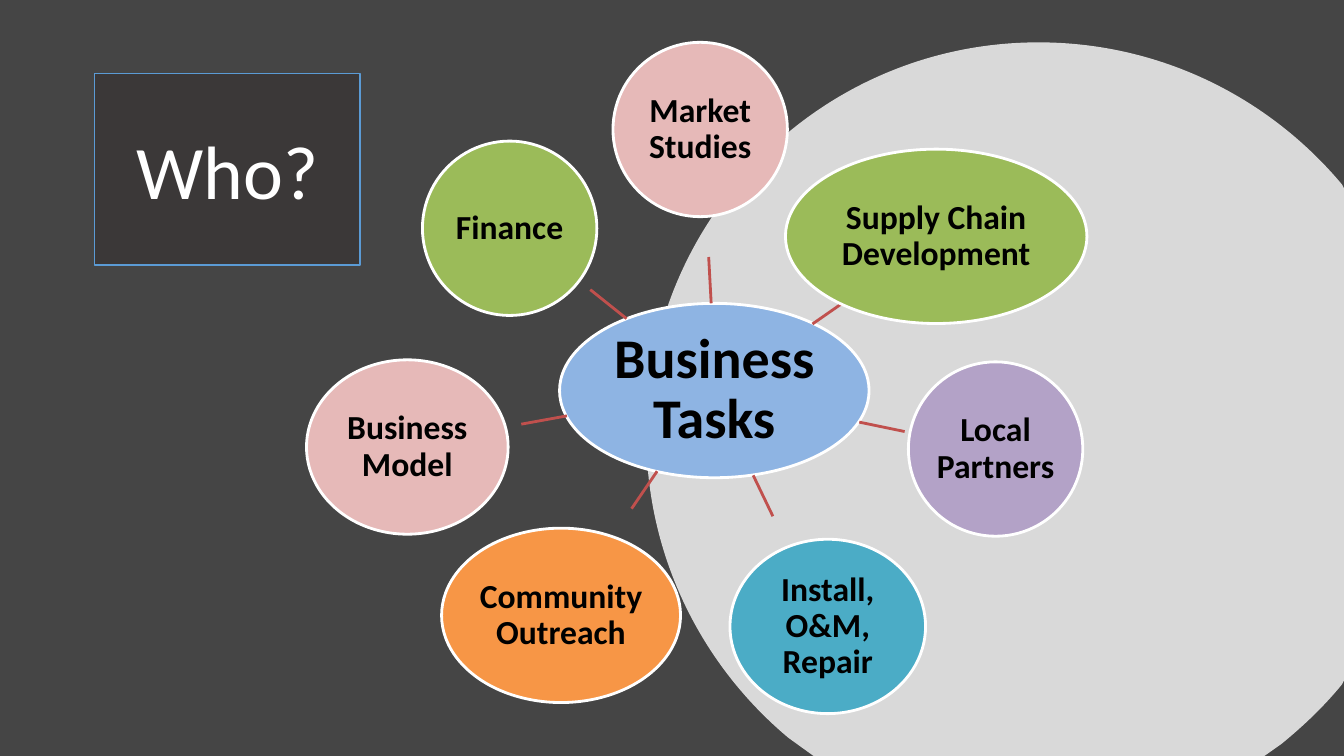
from dataclasses import dataclass

from lxml.etree import SubElement
from pptx import Presentation
from pptx.dml.color import RGBColor
from pptx.enum.shapes import MSO_SHAPE
from pptx.enum.text import MSO_ANCHOR, PP_ALIGN
from pptx.oxml.ns import qn
from pptx.util import Inches, Pt


@dataclass(frozen=True)
class Theme:
    font: str = "Calibri"
    background: str = "454545"
    title_fill: str = "3B3838"
    title_line: str = "5B9BD5"
    white: str = "FFFFFF"
    black: str = "000000"
    hub: str = "8EB4E3"
    spoke: str = "C0504D"
    pink: str = "E6B9B8"
    green: str = "9BBB59"
    purple: str = "B3A2C7"
    teal: str = "4BACC6"
    orange: str = "F79646"
    title_size: int = 54
    hub_size: int = 40
    node_size: int = 24


THEME = Theme()
WIDTH, HEIGHT = 13.33, 7.5
NODE_HEIGHT = 1.73
SPOKE_HEIGHT = 0.03
HUB = (5.55, 3.01, 3.07)
NODES = [
    ("Market Studies", THEME.pink, (6.08, 0.42, 1.73), (6.58, 2.56, 0.87, 266.9, 0.46)),
    ("Supply Chain Development", THEME.green, (7.79, 1.48, 2.99), (8.02, 3.09, 0.34, 325.2, 0.37)),
    ("Local Partners", THEME.purple, (9.01, 3.59, 1.73), (8.52, 4.21, 0.51, 11.7, 0.46)),
    ("Install, O&M, Repair", THEME.teal, (7.24, 5.35, 1.94), (7.26, 5.05, 0.79, 64.3, 0.45)),
    ("Community Outreach", THEME.orange, (4.38, 5.24, 2.37), (5.92, 4.99, 0.78, 124.3, 0.45)),
    ("Business Model", THEME.pink, (3.04, 3.57, 2), (5.02, 4.18, 0.61, 169.7, 0.46)),
    ("Finance", THEME.green, (4.19, 1.4, 1.73), (5.67, 2.97, 0.6, 218.6, 0.46)),
]
DISC_START = (10.3, 0.42)
DISC_SEGMENTS = [
    [(11.51, 0.42), (12.59, 0.97), (13.31, 1.83)],
    [(13.33, 1.87)],
    [(13.33, 6.75)],
    [(13.31, 6.79)],
    [(13.13, 7.01), (12.93, 7.2), (12.71, 7.38)],
    [(12.54, 7.5)],
    [(8.07, 7.5)],
    [(7.82, 7.32)],
    [(6.96, 6.6), (6.41, 5.52), (6.41, 4.31)],
    [(6.41, 2.16), (8.15, 0.42), (10.3, 0.42)],
]


def rgb(color):
    return RGBColor.from_string(color)


def apply(target, values):
    for name, value in values.items():
        setattr(target, name, value)


def stroke(sp, color, width):
    sp.shadow.inherit = False
    sp.line.color.rgb = rgb(color)
    sp.line.width = Pt(width)


def paint(sp, fill):
    sp.fill.solid()
    sp.fill.fore_color.rgb = rgb(fill)


def write(sp, text, size, color, bold, inset, spacing):
    tf = sp.text_frame
    apply(tf, {
        "word_wrap": True,
        "vertical_anchor": MSO_ANCHOR.MIDDLE,
        "margin_left": Inches(inset),
        "margin_right": Inches(inset),
        "margin_top": Inches(inset),
        "margin_bottom": Inches(inset),
    })
    p = tf.paragraphs[0]
    apply(p, {"alignment": PP_ALIGN.CENTER, "line_spacing": spacing})
    r = p.add_run()
    r.text = text
    apply(r.font, {"name": THEME.font, "size": Pt(size), "bold": bold})
    r.font.color.rgb = rgb(color)


def add_bubble(shapes, text, fill, place, size, inset=0.02):
    left, top, width = place
    sp = shapes.add_shape(MSO_SHAPE.OVAL, Inches(left), Inches(top),
                          Inches(width), Inches(NODE_HEIGHT))
    paint(sp, fill)
    stroke(sp, THEME.white, 2)
    write(sp, text, size, THEME.black, True, inset, 0.9)


def add_outline(shapes, points, close):
    points = [(Inches(x), Inches(y)) for x, y in points]
    builder = shapes.build_freeform(*points[0], scale=1.0)
    builder.add_line_segments(points[1:], close=close)
    sp = builder.convert_to_shape()
    return sp, next(sp._element.iter(qn("a:path")))


def add_spoke(shapes, place):
    left, top, width, rotation, length = place
    sp, outline = add_outline(shapes, [(left, top), (left + length, top)], False)
    apply(sp, {"width": Inches(width), "height": Inches(SPOKE_HEIGHT), "rotation": rotation})
    outline.set("w", str(Inches(width)))
    outline.set("h", str(Inches(SPOKE_HEIGHT)))
    for point in outline.iter(qn("a:pt")):
        point.set("y", str(Inches(SPOKE_HEIGHT)))
    sp.fill.background()
    stroke(sp, THEME.spoke, 2)


def add_disc(shapes, opacity):
    points = [DISC_START] + [point for segment in DISC_SEGMENTS for point in segment]
    sp, outline = add_outline(shapes, points, True)
    lines = iter(outline.findall(qn("a:lnTo")))
    for segment in DISC_SEGMENTS:
        first = next(lines)
        if len(segment) == 3:
            first.tag = qn("a:cubicBezTo")
            for _ in range(2):
                extra = next(lines)
                first.append(extra[0])
                outline.remove(extra)
    sp.shadow.inherit = False
    paint(sp, THEME.white)
    sp.line.fill.background()
    color = sp._element.spPr.find(qn("a:solidFill"))[0]
    SubElement(color, qn("a:alpha"), val=str(opacity * 1000))


def add_title(shapes, text):
    sp = shapes.add_shape(MSO_SHAPE.RECTANGLE, Inches(0.94), Inches(0.73),
                          Inches(2.63), Inches(1.9))
    paint(sp, THEME.title_fill)
    stroke(sp, THEME.title_line, 1)
    write(sp, text, THEME.title_size, THEME.white, False, 0.1, 1.0)


def main():
    prs = Presentation()
    apply(prs, {"slide_width": Inches(WIDTH), "slide_height": Inches(HEIGHT)})
    s = prs.slides.add_slide(prs.slide_layouts[6])
    paint(s.background, THEME.background)
    add_disc(s.shapes, 80)
    diagram = s.shapes.add_group_shape().shapes
    add_bubble(diagram, "Business Tasks", THEME.hub, HUB, THEME.hub_size, 0.03)
    for text, fill, place, spoke in NODES:
        add_spoke(diagram, spoke)
        add_bubble(diagram, text, fill, place, THEME.node_size)
    add_title(s.shapes, "Who?")
    prs.save("out.pptx")


if __name__ == "__main__":
    main()
